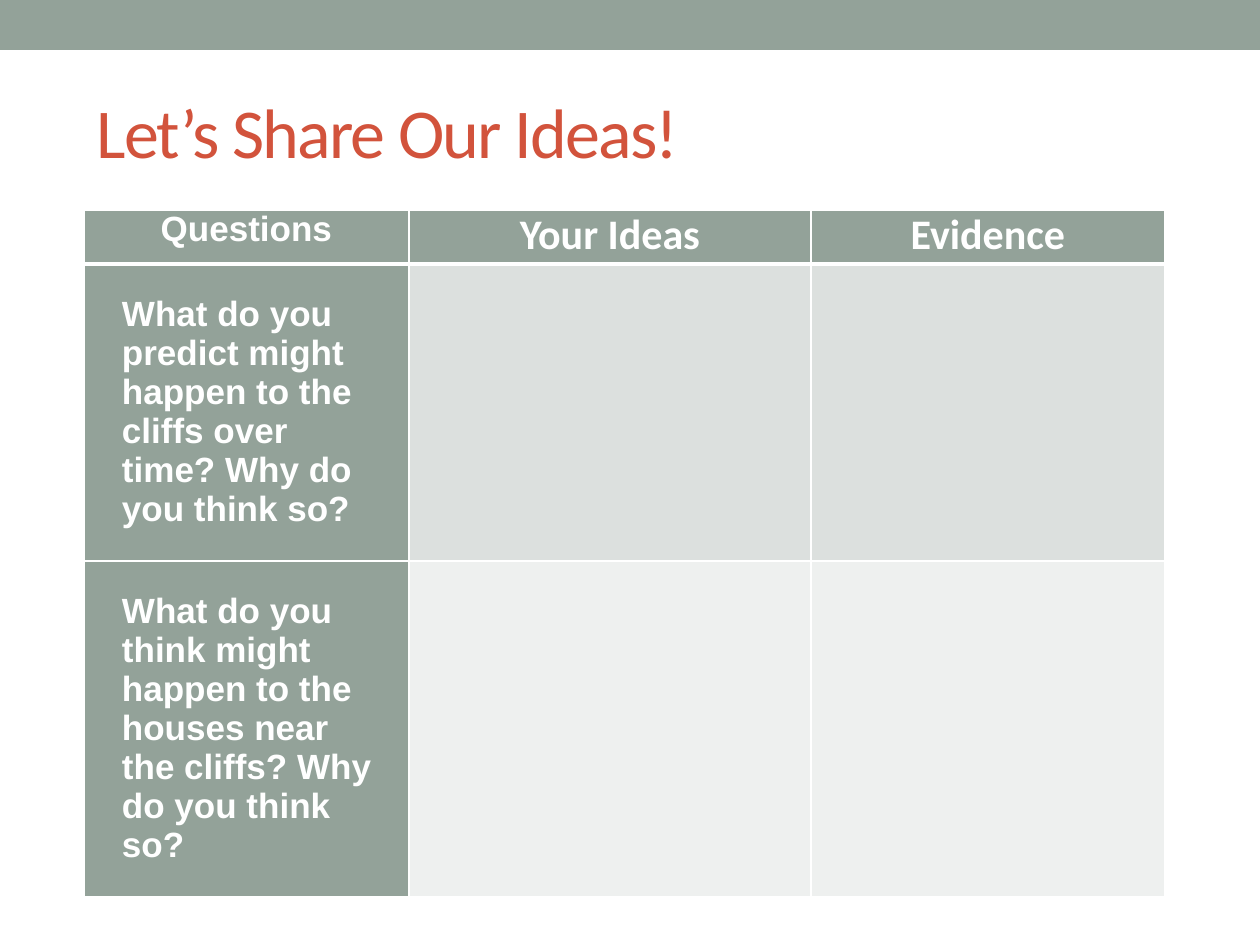
from lxml.etree import SubElement
from pptx import Presentation
from pptx.dml.color import RGBColor
from pptx.enum.shapes import MSO_SHAPE
from pptx.enum.text import MSO_ANCHOR, PP_ALIGN
from pptx.oxml.ns import qn
from pptx.util import Emu, Pt

PX = 914400 / 126
SAGE, WHITE, RED = "93A299", "FFFFFF", "D2533C"


def paint(target, color):
    """Give a fill a solid colour."""
    target.solid()
    target.fore_color.rgb = RGBColor.from_string(color)


def write(frame, text, font="Arial", size=20, color=WHITE, bold=True,
          align=PP_ALIGN.LEFT, indent=0, spacing=0):
    """Put one formatted paragraph in a frame; spacing is in points."""
    paragraph = frame.paragraphs[0]
    paragraph.alignment = align
    if indent:
        properties = paragraph._p.get_or_add_pPr()
        properties.set("marL", str(round(indent * PX)))
        properties.set("indent", "0")
    run = paragraph.add_run()
    run.text = text
    run.font.name = font
    run.font.size = Pt(size)
    run.font.bold = bold
    paint(run.font.fill, color)
    if spacing:
        run._r.get_or_add_rPr().set("spc", str(spacing * 100))


prs = Presentation()
prs.slide_width, prs.slide_height = Emu(round(1260 * PX)), Emu(round(945 * PX))
slide = prs.slides.add_slide(prs.slide_layouts[5])

# Top band
band = slide.shapes.add_shape(MSO_SHAPE.RECTANGLE, 0, 0, prs.slide_width, Emu(round(50 * PX)))
band.shadow.inherit = False
paint(band.fill, SAGE)
band.line.fill.background()

# Title
title = slide.shapes.title
title.left, title.top, title.width, title.height = (
    Emu(round(n * PX)) for n in (84, 84, 1081, 94))
title.text_frame.vertical_anchor = MSO_ANCHOR.MIDDLE
write(title.text_frame, "Let’s Share Our Ideas!", font="Calibri", size=40,
      color=RED, bold=False, spacing=-1)

# Table of questions
headings = [("Questions", "Arial", 20), ("Your Ideas", "Calibri", 24), ("Evidence", "Calibri", 24)]
questions = [
    "What do you predict might happen to the cliffs over time? Why do you think so?",
    "What do you think might happen to the houses near the cliffs? Why do you think so?",
]
answer_fills = ["DCE0DE", "EEF0EF"]
column_widths = [325, 402, 354]
row_heights = [54, 297, 336]

table = slide.shapes.add_table(
    len(row_heights), len(column_widths),
    *(Emu(round(n * PX)) for n in (84, 210, sum(column_widths), sum(row_heights)))).table
for column, width in zip(table.columns, column_widths):
    column.width = Emu(round(width * PX))
for row, height in zip(table.rows, row_heights):
    row.height = Emu(round(height * PX))

for r in range(len(row_heights)):
    for c in range(len(column_widths)):
        cell = table.cell(r, c)
        cell_properties = cell._tc.get_or_add_tcPr()
        for side in ("lnL", "lnR", "lnT", "lnB"):
            under_heading = (r, side) in ((0, "lnB"), (1, "lnT"))
            border = SubElement(cell_properties, qn(f"a:{side}"),
                                w=str(Pt(3 if under_heading else 1)))
            SubElement(SubElement(border, qn("a:solidFill")), qn("a:srgbClr"), val=WHITE)
        paint(cell.fill, SAGE if r == 0 or c == 0 else answer_fills[r - 1])

        if r == 0:
            cell.margin_left = cell.margin_right = Emu(round(9 * PX))
            cell.margin_top = cell.margin_bottom = 0
            text, font, size = headings[c]
            write(cell.text_frame, text, font=font, size=size, align=PP_ALIGN.CENTER)
        elif c == 0:
            cell.margin_left = cell.margin_right = Emu(round(19 * PX))
            cell.margin_top = cell.margin_bottom = Emu(round(31 * PX))
            write(cell.text_frame, questions[r - 1], indent=19)

prs.save("out.pptx")
